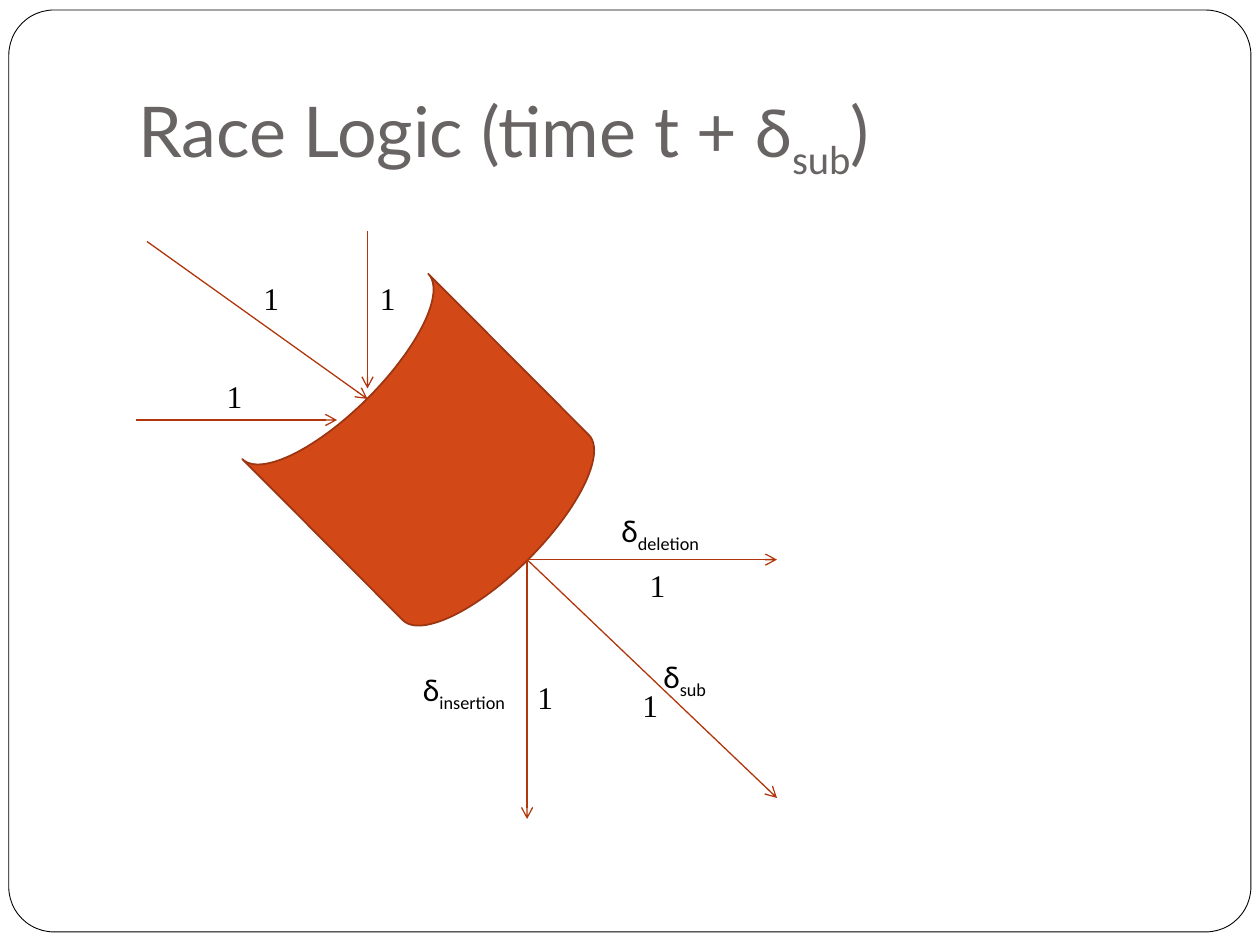
from dataclasses import dataclass

from lxml import etree
from pptx import Presentation
from pptx.dml.color import RGBColor as Rgb
from pptx.enum import shapes, text
from pptx.oxml import ns
from pptx.util import Inches, Pt

COLS, ROWS = 120, 90
WIDTH, HEIGHT = Inches(10), Inches(7.5)


@dataclass(frozen=True)
class Theme:
    paper: str = "FFFFFF"
    ink: str = "000000"
    title: str = "696464"
    gate: str = "D34817"
    edge: str = "9C3511"
    wire: str = "B1360B"
    head: str = "Lato"
    sans: str = "Calibri"
    serif: str = "Times New Roman"
    big: int = 40
    small: int = 18


LOOK = Theme()


def grid(x, y):
    return round(x * WIDTH / COLS), round(y * HEIGHT / ROWS)


def form(slide, kind, box, fill, line, width):
    shape = slide.shapes.add_shape(kind, *grid(*box[:2]), *grid(*box[2:]))
    shape.shadow.inherit = False
    shape.fill.solid()
    shape.fill.fore_color.rgb = Rgb.from_string(fill)
    shape.line.color.rgb = Rgb.from_string(line)
    shape.line.width = Pt(width)
    return shape


def label(slide, box, runs, face, size, color):
    area = slide.shapes.add_textbox(*grid(*box[:2]), *grid(*box[2:]))
    frame = area.text_frame
    frame.word_wrap = True
    par = frame.paragraphs[0]
    par.font.name = face
    par.font.size = Pt(size)
    par.font.color.rgb = Rgb.from_string(color)
    for words, sub in runs:
        run = par.add_run()
        run.text = words
        if sub:
            run.font._element.set("baseline", "-25000")
    return frame


def arrow(slide, start, end):
    wire = slide.shapes.add_connector(
        shapes.MSO_CONNECTOR.STRAIGHT, *grid(*start), *grid(*end))
    wire.line.color.rgb = Rgb.from_string(LOOK.wire)
    wire.line.width = Pt(0.75)
    etree.SubElement(wire.line._get_or_add_ln(), ns.qn("a:tailEnd"), type="arrow")
    etree.SubElement(wire._element.spPr, ns.qn("a:effectLst"))


def one(slide, x, y):
    label(slide, (x, y, 4.1, 4.8), [("1", False)],
          LOOK.serif, LOOK.small, LOOK.ink)


def delta(slide, x, y, name):
    label(slide, (x, y, 13.9, 4.8), [("δ", False), (name, True)],
          LOOK.sans, LOOK.small, LOOK.ink)


def border(slide, box):
    shape = form(slide, shapes.MSO_SHAPE.ROUNDED_RECTANGLE, box,
                 LOOK.paper, LOOK.ink, 0.5)
    shape.adjustments[0] = 0.049


def title(slide, box):
    runs = [("Race Logic (time t + ", False), ("δ", False),
            ("sub", True), (")", False)]
    frame = label(slide, box, runs, LOOK.head, LOOK.big, LOOK.title)
    frame.vertical_anchor = text.MSO_ANCHOR.BOTTOM
    frame.margin_bottom = Inches(0.1)
    for run in frame.paragraphs[0].runs[1:3]:
        run.font.name = LOOK.sans


def gate(slide, box):
    shape = form(slide, shapes.MSO_SHAPE.FLOWCHART_STORED_DATA, box,
                 LOOK.gate, LOOK.edge, 1)
    shape.rotation = 225.1


def inputs(slide, box):
    x, y, w, h = box
    arrow(slide, (x, y + h), (x + 19.1, y + h))
    arrow(slide, (x + w, y), (x + w, y + 15))
    arrow(slide, (x + 1, y + 1), (x + w, y + 16))
    for dx, dy in ((w, 4), (10.9, 4), (7.4, 13.3)):
        one(slide, x + dx, y + dy)


def outputs(slide, box):
    x, y, w, h = box
    for dx, dy in ((w, h - 2), (0, h), (w, 0)):
        arrow(slide, (x, y), (x + dx, y + dy))
    for dx, dy, name in ((7.8, -5.2, "deletion"), (-11.1, 9.9, "insertion"),
                         (11.8, 8.7, "sub")):
        delta(slide, x + dx, y + dy, name)
    for dx, dy in ((10.5, 0), (9.8, 11.4), (-0.2, 10.7)):
        one(slide, x + dx, y + dy)


def main():
    deck = Presentation()
    deck.slide_width, deck.slide_height = WIDTH, HEIGHT
    slide = deck.slides.add_slide(deck.slide_layouts[6])
    border(slide, (0.84, 0.96, 118.3, 87.8))
    title(slide, (12, 3.6, 102, 15))
    gate(slide, (28.1, 31.6, 26, 25))
    inputs(slide, (13, 22, 22, 18))
    outputs(slide, (50.2, 53.3, 23.8, 24.7))
    deck.save("out.pptx")


if __name__ == "__main__":
    main()
